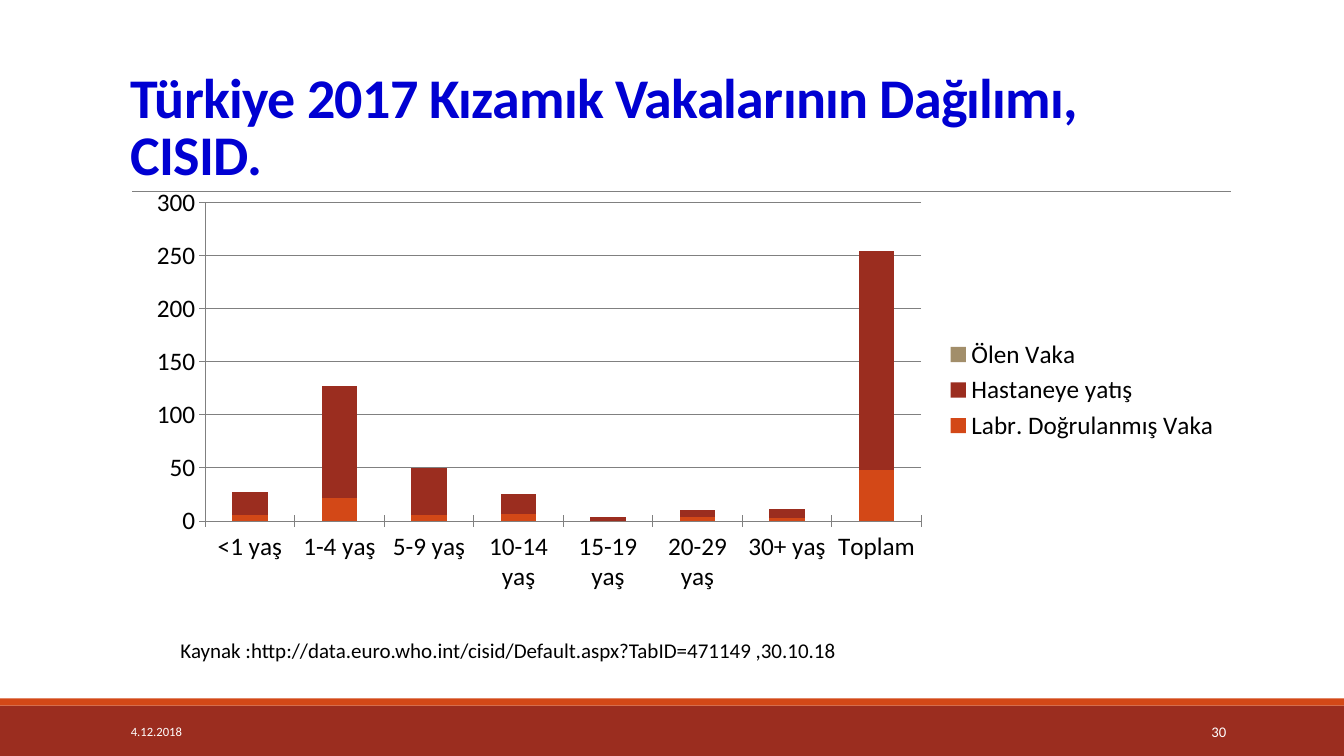
from dataclasses import dataclass

from lxml.etree import SubElement
from pptx import Presentation
from pptx.chart.data import CategoryChartData
from pptx.dml.color import RGBColor
from pptx.enum.chart import XL_CHART_TYPE, XL_LEGEND_POSITION, XL_TICK_MARK
from pptx.enum.shapes import MSO_CONNECTOR, MSO_SHAPE
from pptx.enum.text import MSO_ANCHOR, PP_ALIGN
from pptx.oxml import parse_xml
from pptx.oxml.ns import nsdecls, qn
from pptx.slide import Slide
from pptx.util import Inches, Pt

FONT = "Calibri"
RUST = "9B2D1F"
ORANGE = "D34817"
SAND = "A28E6A"
GRAY = "808080"
BLACK = "000000"
WHITE = "FFFFFF"
BLUE = "0000D2"


@dataclass(frozen=True)
class Box:
    left: float
    top: float
    width: float
    height: float

    def lengths(self) -> list[Inches]:
        return [Inches(value) for value in (self.left, self.top, self.width, self.height)]


@dataclass(frozen=True)
class Band:
    box: Box
    color: str


@dataclass(frozen=True)
class CaseSeries:
    name: str
    values: tuple[int, ...]
    color: str


BANDS = (
    Band(Box(0, 7, 13.33, 0.5), RUST),
    Band(Box(0, 6.93, 13.33, 0.07), ORANGE),
)
AGE_GROUPS = ("<1 yaş", "1-4 yaş", "5-9 yaş", "10-14 yaş",
              "15-19 yaş", "20-29 yaş", "30+ yaş", "Toplam")
CASE_SERIES = (
    CaseSeries("Labr. Doğrulanmış Vaka", (6, 22, 6, 7, 0, 4, 3, 48), ORANGE),
    CaseSeries("Hastaneye yatış", (21, 105, 44, 18, 4, 6, 8, 206), RUST),
    CaseSeries("Ölen Vaka", (0,) * len(AGE_GROUPS), SAND),
)
CHART_BOX = Box(1.34, 1.78, 10.86, 4.18)
PLOT_BOX = Box(2.03, 2.01, 7.1, 3.16)


def rgb(color: str) -> RGBColor:
    return RGBColor.from_string(color)


def add_band(slide: Slide, band: Band) -> None:
    shape = slide.shapes.add_shape(MSO_SHAPE.RECTANGLE, *band.box.lengths())
    shape.shadow.inherit = False
    shape.fill.solid()
    shape.fill.fore_color.rgb = rgb(band.color)
    shape.line.fill.background()


def add_title_rule(slide: Slide) -> None:
    rule = slide.shapes.add_connector(
        MSO_CONNECTOR.STRAIGHT, Inches(1.31), Inches(1.9), Inches(12.21), Inches(1.9))
    rule.line.color.rgb = rgb(GRAY)
    rule.line.width = Pt(0.5)
    SubElement(rule._element.spPr, qn("a:effectLst"))


def add_text(slide: Slide, text: str, box: Box, *, size: float, color: str,
             bold: bool = False, align: PP_ALIGN = PP_ALIGN.LEFT,
             anchor: MSO_ANCHOR = MSO_ANCHOR.MIDDLE, line_spacing: float = 1.0,
             character_spacing: float = 0, side_inset: float = 0.1,
             end_inset: float = 0.05) -> None:
    frame = slide.shapes.add_textbox(*box.lengths()).text_frame
    frame.word_wrap = True
    frame.vertical_anchor = anchor
    frame.margin_left = frame.margin_right = Inches(side_inset)
    frame.margin_top = frame.margin_bottom = Inches(end_inset)
    paragraph = frame.paragraphs[0]
    paragraph.alignment = align
    paragraph.line_spacing = line_spacing
    run = paragraph.add_run()
    run.text = text
    run.font.name = FONT
    run.font.size = Pt(size)
    run.font.bold = bold
    run.font.color.rgb = rgb(color)
    if character_spacing:
        run.font._element.set("spc", str(round(character_spacing * 100)))


def place_plot(plot_area, chart_box: Box, plot_box: Box) -> None:
    for layout in plot_area.findall(qn("c:layout")):
        plot_area.remove(layout)
    fractions = {
        "x": (plot_box.left - chart_box.left) / chart_box.width,
        "y": (plot_box.top - chart_box.top) / chart_box.height,
        "w": plot_box.width / chart_box.width,
        "h": plot_box.height / chart_box.height,
    }
    modes = '<c:layoutTarget val="inner"/><c:xMode val="edge"/><c:yMode val="edge"/>'
    sizes = "".join(f'<c:{key} val="{value:.3f}"/>' for key, value in fractions.items())
    plot_area.insert(0, parse_xml(
        f'<c:layout {nsdecls("c")}><c:manualLayout>{modes}{sizes}</c:manualLayout></c:layout>'))


def add_case_chart(slide: Slide) -> None:
    data = CategoryChartData()
    data.categories = AGE_GROUPS
    for case_series in CASE_SERIES:
        data.add_series(case_series.name, case_series.values)
    chart = slide.shapes.add_chart(
        XL_CHART_TYPE.COLUMN_STACKED, *CHART_BOX.lengths(), data).chart
    chart.has_title = False
    chart.font.name = FONT
    chart.font.size = Pt(18)
    chart.font.color.rgb = rgb(BLACK)
    chart.has_legend = True
    chart.legend.position = XL_LEGEND_POSITION.RIGHT
    chart.legend.include_in_layout = False

    plot = chart.plots[0]
    plot.vary_by_categories = False
    plot.overlap = 100
    plot.gap_width = 150
    for series, case_series in zip(plot.series, CASE_SERIES):
        series.format.fill.solid()
        series.format.fill.fore_color.rgb = rgb(case_series.color)

    value_axis = chart.value_axis
    value_axis.minimum_scale = 0
    value_axis.maximum_scale = 300
    value_axis.major_unit = 50
    value_axis.has_major_gridlines = True
    for axis in (chart.category_axis, value_axis):
        axis.major_tick_mark = XL_TICK_MARK.CROSS
    for line_owner in (chart.category_axis, value_axis, value_axis.major_gridlines):
        line_owner.format.line.color.rgb = rgb(GRAY)
        line_owner.format.line.width = Pt(0.75)
    place_plot(chart._chartSpace.chart.plotArea, CHART_BOX, PLOT_BOX)


def main() -> None:
    presentation = Presentation()
    presentation.slide_width = Inches(13.33)
    presentation.slide_height = Inches(7.5)
    slide = presentation.slides.add_slide(presentation.slide_layouts[6])
    for band in BANDS:
        add_band(slide, band)
    add_title_rule(slide)
    add_text(slide, "Türkiye 2017 Kızamık Vakalarının Dağılımı, CISID.",
             Box(1.2, 0.31, 11, 1.59), size=40, color=BLUE, bold=True,
             anchor=MSO_ANCHOR.BOTTOM, line_spacing=0.85, character_spacing=-0.5)
    add_case_chart(slide)
    add_text(slide, "Kaynak :http://data.euro.who.int/cisid/Default.aspx?TabID=471149 ,30.10.18",
             Box(1.72, 6.28, 6.86, 0.47), size=15, color=BLACK,
             anchor=MSO_ANCHOR.TOP, side_inset=0.07, end_inset=0.04)
    add_text(slide, "4.12.2018", Box(1.2, 7.06, 2.7, 0.4), size=9, color=WHITE)
    add_text(slide, "30", Box(10.83, 7.06, 1.43, 0.4), size=10.5, color=WHITE,
             align=PP_ALIGN.RIGHT)
    presentation.save("out.pptx")


if __name__ == "__main__":
    main()
